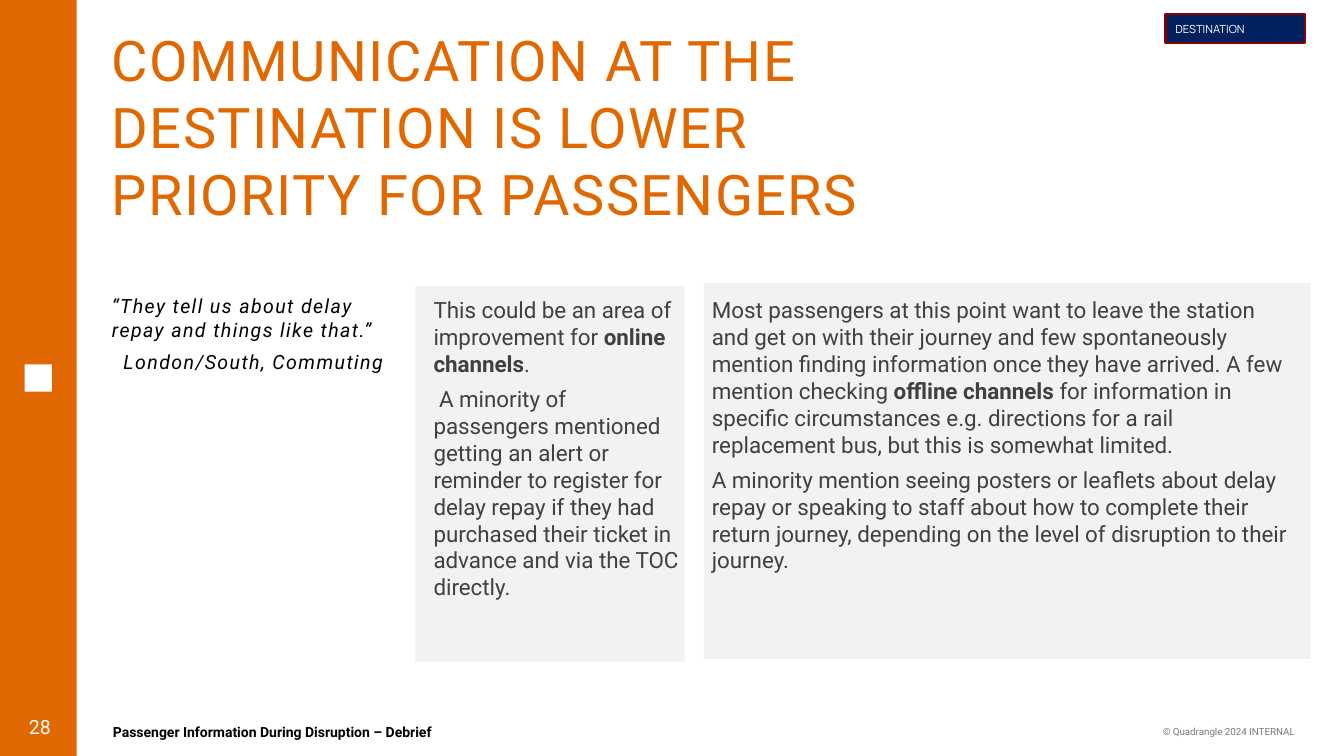
from dataclasses import dataclass

from pptx import Presentation
from pptx import util as u
from pptx.dml.color import RGBColor
from pptx.enum import shapes, text


@dataclass(frozen=True)
class Theme:
    orange: str = "E16800"
    navy: str = "002060"
    red: str = "880000"
    panel: str = "F2F2F2"
    body: str = "404040"
    grey: str = "797979"
    black: str = "000000"
    white: str = "FFFFFF"
    font: str = "Roboto"
    tag_font: str = "Manrope"
    title_size: int = 40
    body_size: int = 16
    quote_size: int = 14
    footer_size: int = 10
    tag_size: int = 8
    copyright_size: int = 7


THEME = Theme()
ALIGN = text.PP_ALIGN
ANCHOR = text.MSO_ANCHOR
RECTANGLE = shapes.MSO_SHAPE.RECTANGLE


def set_all(target, **values):
    for name, value in values.items():
        setattr(target, name, value)


def add_block(slide, box, fill, line=None, line_width=1.5):
    block = slide.shapes.add_shape(RECTANGLE, *map(u.Inches, box))
    block.shadow.inherit = False
    block.fill.solid()
    block.fill.fore_color.rgb = RGBColor.from_string(fill)
    if line:
        block.line.color.rgb = RGBColor.from_string(line)
        block.line.width = u.Pt(line_width)
    else:
        block.line.fill.background()
    return block


def write(frame, paragraphs, size, color, font=THEME.font, bold=False, italic=False,
          spacing=0, aligns=(ALIGN.LEFT,), anchor=ANCHOR.TOP, inset=(0, 0)):
    """Fill a frame; each paragraph is a list of runs, and every second run flips bold."""
    side, top = map(u.Inches, inset)
    set_all(frame, word_wrap=True, auto_size=text.MSO_AUTO_SIZE.NONE,
            vertical_anchor=anchor, margin_left=side, margin_right=side,
            margin_top=top, margin_bottom=top)
    for index, runs in enumerate(paragraphs):
        paragraph = frame.add_paragraph() if index else frame.paragraphs[0]
        paragraph.alignment = aligns[min(index, len(aligns) - 1)]
        if index:
            paragraph.space_before = u.Pt(6)
        for position, words in enumerate(runs):
            run = paragraph.add_run()
            run.text = words
            set_all(run.font, name=font, size=u.Pt(size), italic=italic,
                    bold=bold != (position % 2 == 1))
            run.font.color.rgb = RGBColor.from_string(color)
            if spacing:
                run._r.get_or_add_rPr().set("spc", str(spacing * 100))


def add_text(slide, box, paragraphs, size, color, **style):
    frame = slide.shapes.add_textbox(*map(u.Inches, box)).text_frame
    write(frame, paragraphs, size, color, **style)


def add_sidebar(slide, box):
    left, top, width, height = box
    add_block(slide, box, THEME.orange)
    mark = 0.27
    add_block(slide, (left + (width - mark) / 2, top + (height - mark) / 2, mark, mark),
              THEME.white)
    add_text(slide, (left, top + 7.01, width + 0.03, 0.39), [["28"]],
             THEME.quote_size, THEME.white, aligns=(ALIGN.CENTER,),
             anchor=ANCHOR.MIDDLE, inset=(0.1, 0.05))


def add_title(slide, box):
    title = slide.shapes.title
    set_all(title, **dict(zip(("left", "top", "width", "height"), map(u.Inches, box))))
    write(title.text_frame,
          [["COMMUNICATION AT THE DESTINATION IS LOWER PRIORITY FOR PASSENGERS"]],
          THEME.title_size, THEME.orange, spacing=1)


def add_stage_tag(slide, box):
    tag = add_block(slide, box, THEME.navy, THEME.red)
    write(tag.text_frame, [["DESTINATION"]], THEME.tag_size, THEME.white,
          font=THEME.tag_font, anchor=ANCHOR.MIDDLE, inset=(0.1, 0.05))


def add_quote(slide, box):
    add_text(slide, box,
             [["“They tell us about delay repay and things like that.”"],
              ["London/South, Commuting"]],
             THEME.quote_size, THEME.black, italic=True, spacing=1,
             aligns=(ALIGN.LEFT, ALIGN.RIGHT))


def add_panel(slide, box, paragraphs, indent, text_width):
    left, top, width, height = box
    add_block(slide, box, THEME.panel)
    add_text(slide, (left + indent, 2.94, text_width, 3.5), paragraphs,
             THEME.body_size, THEME.body)


def add_footer(slide, box):
    left, top, width, height = box
    add_text(slide, (left + 0.01, top, 4.06, height),
             [["Passenger Information During Disruption – Debrief"]],
             THEME.footer_size, THEME.black, bold=True, anchor=ANCHOR.MIDDLE)
    add_text(slide, (left + width - 4.5, top, 4.5, height),
             [["© Quadrangle 2024 INTERNAL"]], THEME.copyright_size, THEME.grey,
             aligns=(ALIGN.RIGHT,), anchor=ANCHOR.MIDDLE, inset=(0.1, 0))


def main():
    deck = Presentation()
    set_all(deck, slide_width=u.Inches(13.33), slide_height=u.Inches(7.5))
    slide = deck.slides.add_slide(deck.slide_layouts[5])

    add_sidebar(slide, (0, 0, 0.76, 7.5))
    add_title(slide, (1.11, 0.25, 7.91, 2.02))
    add_stage_tag(slide, (11.56, 0.14, 1.38, 0.29))
    add_quote(slide, (1.11, 2.92, 2.69, 0.79))
    add_panel(slide, (4.12, 2.84, 2.67, 3.73), [
        ["This could be an area of improvement for ", "online channels", "."],
        [" A minority of passengers mentioned getting an alert or reminder to register "
         "for delay repay if they had purchased their ticket in advance and via the TOC "
         "directly."],
    ], indent=0.18, text_width=2.5)
    add_panel(slide, (6.98, 2.81, 6.02, 3.73), [
        ["Most passengers at this point want to leave the station and get on with their "
         "journey and few spontaneously mention finding information once they have "
         "arrived. A few mention checking ",
         "offline channels ",
         "for information in specific circumstances e.g. directions for a rail "
         "replacement bus, but this is somewhat limited."],
        ["A minority mention seeing posters or leaflets about delay repay or speaking to "
         "staff about how to complete their return journey, depending on the level of "
         "disruption to their journey."],
    ], indent=0.08, text_width=5.75)
    add_footer(slide, (1.11, 7.16, 11.83, 0.2))

    deck.save("out.pptx")


if __name__ == "__main__":
    main()
